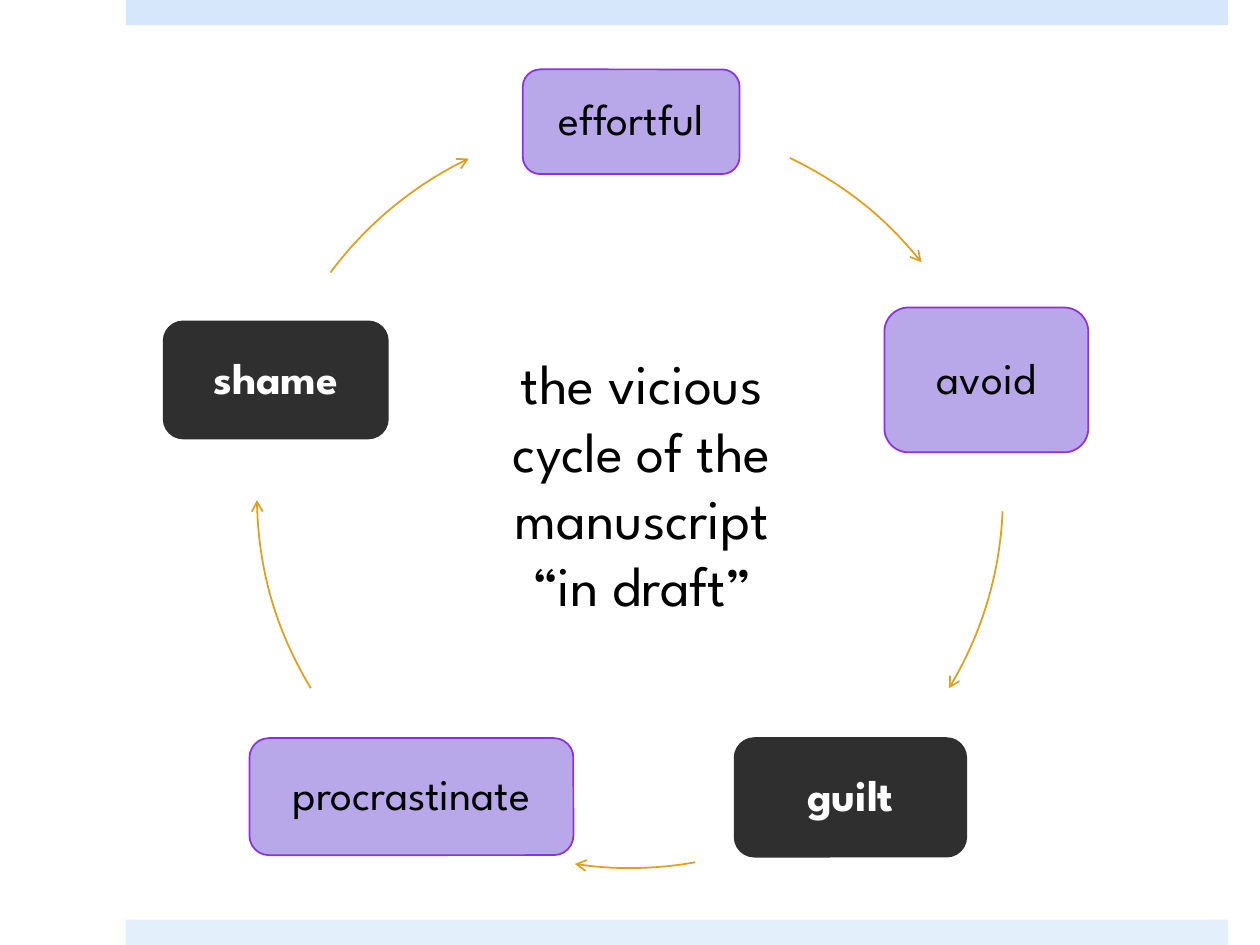
from dataclasses import dataclass

from lxml.etree import SubElement
from pptx import Presentation
from pptx.dml.color import RGBColor as Color
from pptx.enum.shapes import MSO_SHAPE as Shape
from pptx.enum.text import MSO_ANCHOR as Anchor, MSO_AUTO_SIZE as AutoSize, PP_ALIGN as Align
from pptx.oxml.ns import qn
from pptx.util import Cm, Pt

SLIDE_SIZE = (25.4, 19.05)
CYCLE_BOX = (5.18, 2.46, 15.04, 15.04)
TITLE_BOX = (9.37, 6.91, 7.14, 5.74)
TITLE_LINES = ["the vicious", "cycle of the", "manuscript", "“in draft”"]

# label, box, is a feeling, angles of the arrow that follows
STAGES = [
    ("effortful", (10.54, 1.4, 4.37, 2.11), False, (295.4, 321.4)),
    ("avoid", (17.83, 6.2, 4.11, 2.92), False, (2.5, 31.2)),
    ("guilt", (14.81, 14.88, 4.67, 2.39), True, (79.9, 98.5)),
    ("procrastinate", (5.03, 14.88, 6.53, 2.36), False, (148.8, 179.2)),
    ("shame", (3.3, 6.48, 4.52, 2.36), True, (216.6, 244.4)),
]


@dataclass(frozen=True)
class Theme:
    font: str = "League Spartan"
    title_size: int = 32
    stage_size: int = 25
    text: str = "000000"
    feeling_text: str = "FFFFFF"
    action_fill: str = "B8A7E9"
    action_line: str = "8D30E4"
    feeling_fill: str = "2F2F2F"
    arrow: str = "E29F1D"
    top_bar: str = "D6E7FB"
    bottom_bar: str = "E4EFFC"


THEME = Theme()
BARS = [
    ((2.54, 0, 22.22, 0.51), THEME.top_bar),
    ((2.54, 18.54, 22.22, 0.51), THEME.bottom_bar),
]


def add_shape(slide, kind, box, fill=None, line=None):
    shape = slide.shapes.add_shape(kind, *map(Cm, box))
    shape.shadow.inherit = False
    if fill:
        shape.fill.solid()
        shape.fill.fore_color.rgb = Color.from_string(fill)
    else:
        shape.fill.background()
    if line:
        shape.line.color.rgb = Color.from_string(line)
        shape.line.width = Pt(1)
    else:
        shape.line.fill.background()
    return shape


def format_paragraph(paragraph, size, color, bold=False):
    paragraph.alignment = Align.CENTER
    paragraph.font.name = THEME.font
    paragraph.font.size = Pt(size)
    paragraph.font.bold = bold
    paragraph.font.color.rgb = Color.from_string(color)


def add_stage(slide, label, box, feeling):
    fill = THEME.feeling_fill if feeling else THEME.action_fill
    line = THEME.feeling_fill if feeling else THEME.action_line
    shape = add_shape(slide, Shape.ROUNDED_RECTANGLE, box, fill, line)
    frame = shape.text_frame
    frame.text = label
    frame.word_wrap = True
    frame.vertical_anchor = Anchor.MIDDLE
    paragraph = frame.paragraphs[0]
    paragraph.line_spacing = 0.9
    color = THEME.feeling_text if feeling else THEME.text
    format_paragraph(paragraph, THEME.stage_size, color, feeling)


def add_arrow(slide, angles):
    arc = add_shape(slide, Shape.ARC, CYCLE_BOX, line=THEME.arrow)
    for index, angle in enumerate(angles):
        arc.adjustments[index] = angle * 60000 / 100000
    outline = arc.element.spPr.find(qn("a:ln"))
    SubElement(outline, qn("a:tailEnd"), type="arrow")


def add_title(slide):
    frame = slide.shapes.add_textbox(*map(Cm, TITLE_BOX)).text_frame
    frame.word_wrap = False
    frame.auto_size = AutoSize.SHAPE_TO_FIT_TEXT
    frame.text = "\n".join(TITLE_LINES)
    for paragraph in frame.paragraphs:
        format_paragraph(paragraph, THEME.title_size, THEME.text)


def main():
    """Build the slide with the five-stage cycle of an unfinished manuscript."""
    presentation = Presentation()
    presentation.slide_width, presentation.slide_height = map(Cm, SLIDE_SIZE)
    slide = presentation.slides.add_slide(presentation.slide_layouts[6])
    for box, fill in BARS:
        add_shape(slide, Shape.RECTANGLE, box, fill)
    for label, box, feeling, angles in STAGES:
        add_stage(slide, label, box, feeling)
        add_arrow(slide, angles)
    add_title(slide)
    presentation.save("out.pptx")


if __name__ == "__main__":
    main()
